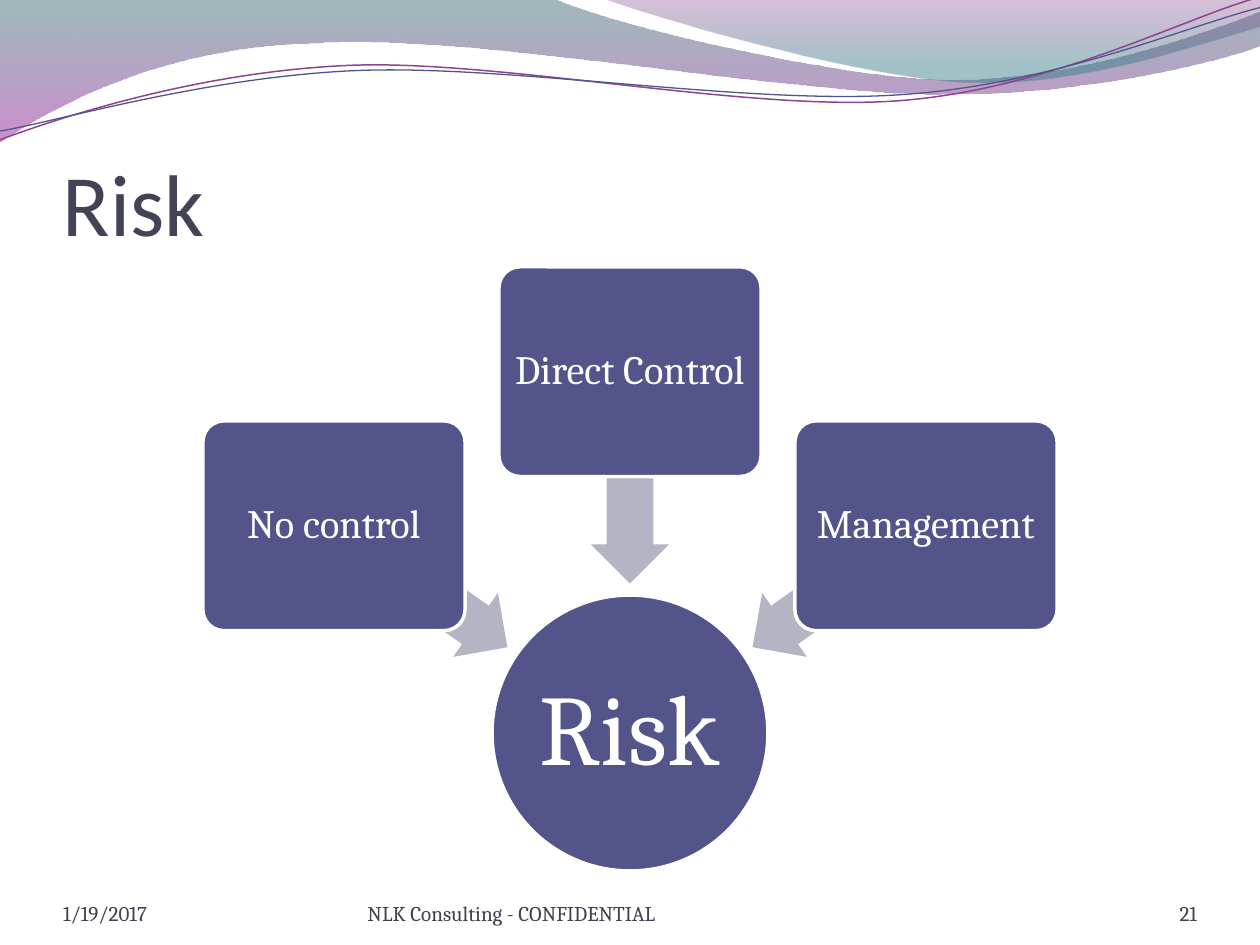
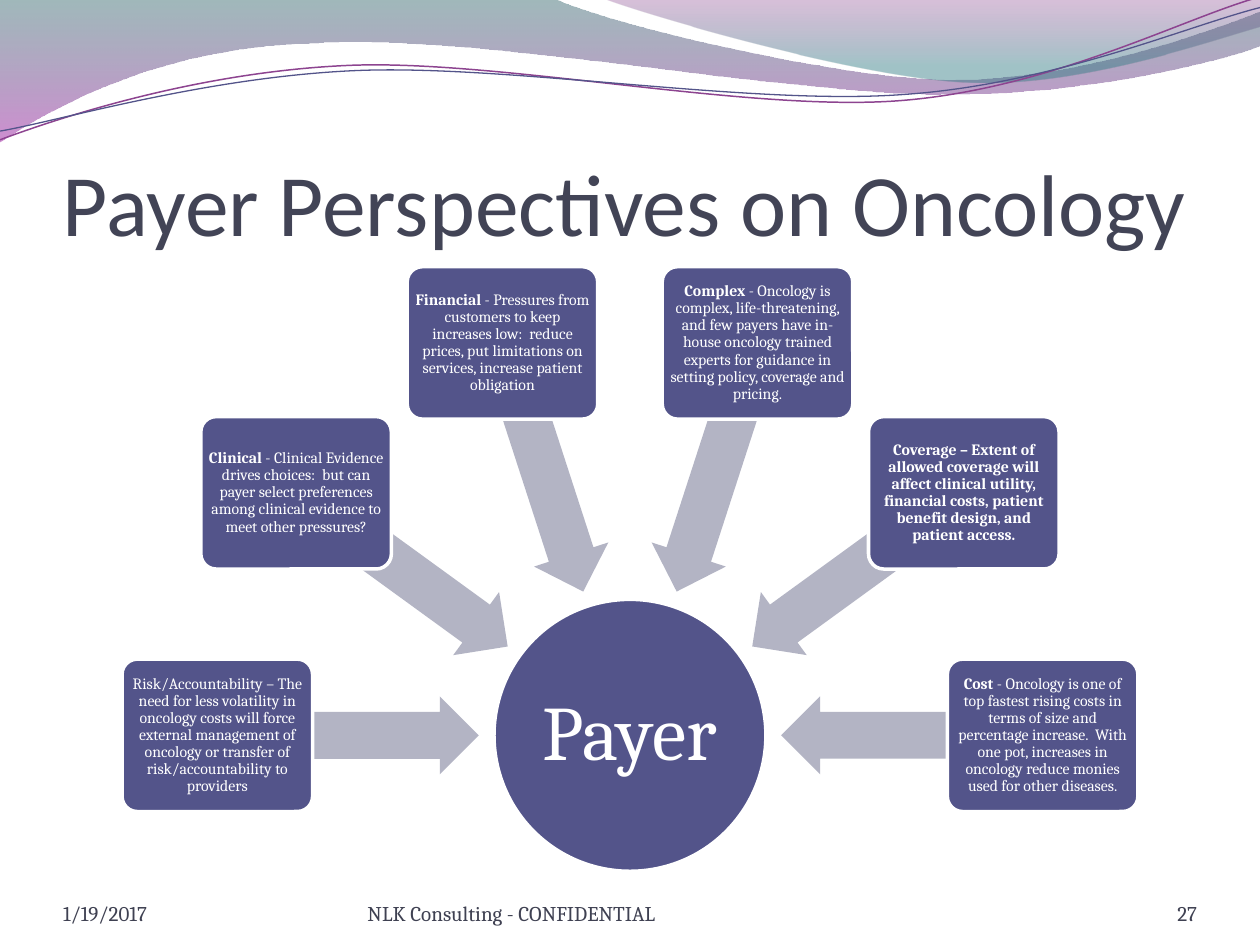
import math
import lxml.etree
import pptx
import pptx.dml.color
import pptx.enum.shapes
import pptx.enum.text
import pptx.oxml.ns
import pptx.util

Pt = pptx.util.Pt
SHAPE = pptx.enum.shapes.MSO_SHAPE
ANCHOR = pptx.enum.text.MSO_ANCHOR
ALIGN = pptx.enum.text.PP_ALIGN
qn = pptx.oxml.ns.qn

COLORS = {
    "title": "424456", "footer": "3F4152", "white": "FFFFFF",
    "indigo": "53548A", "arrow": "B3B4C4", "plum": "8D4490",
    "deep_teal": "2D6368", "magenta": "A530A9",
    "purple": "7F2F82", "teal": "2F7B82",
}
SLIDE_WIDTH, SLIDE_HEIGHT = 720, 540
HUB_X = SLIDE_WIDTH / 2
ARROW_WIDTH = 44.6

waves = [
    {"start": (0, 0),
     "segments": [(316.8, -0.7),
                  (342.7, 12.2, 478.1, 45.4, 545.8, 45.4),
                  (614.2, 45.4, 689.8, 18.7, 720, 6.5),
                  (720.7, 25.9),
                  (707.8, 31.7, 626.4, 54.7, 537.1, 54),
                  (447.8, 54, 275, 20.2, 185, 24.5),
                  (92.9, 25.9, 33.1, 59.8, -0.7, 81.4),
                  (0, 0)],
     "gradient": [(0, "deep_teal", 45), (100, "magenta", 55)]},
    {"start": (344.9, -0.7),
     "segments": [(366.5, 7.9, 491, 44.6, 553.7, 46.8),
                  (616.3, 49.7, 691.9, 23, 720, 15.1),
                  (720, 0),
                  (344.9, -0.7)],
     "gradient": [(0, "purple", 30), (80, "teal", 45)]},
    {"start": (0, 79.9),
     "segments": [(34.6, 67, 113.8, 41, 199.4, 37.4),
                  (284.4, 33.8, 427, 64.1, 513.4, 57.6),
                  (599.8, 51.1, 675.4, 10.8, 718.6, -1.4)],
     "line": ("plum", 0.85)},
    {"start": (0, 74.9),
     "segments": [(33.8, 69.1, 118.1, 43.9, 203.8, 40.3),
                  (290.2, 36.7, 429.8, 60.5, 516.2, 54),
                  (601.9, 48.2, 677.5, 15.1, 720, 4.3)],
     "line": ("indigo", 0.75)},
]

diagrams = [
    {"title": "Risk", "number": "21", "hub": "Risk", "hub_size": 57,
     "hub_y": 418.9, "hub_diameter": 157.7,
     "factor_distance": 206.5, "factor_width": 149.8, "factor_size": 23,
     "arrow_distance": 146, "arrow_length": 121,
     "first_angle": 215, "angle_step": 55,
     "factors": [("", "No control"), ("", "Direct Control"), ("", "Management")]},
    {"title": "Payer Perspectives on Oncology", "number": "27", "hub": "Payer", "hub_size": 44,
     "hub_y": 420.2, "hub_diameter": 155.4,
     "factor_distance": 235.8, "factor_width": 108.9, "factor_size": 9,
     "arrow_distance": 160.9, "arrow_length": 149,
     "first_angle": 180, "angle_step": 36,
     "factors": [
         ("", "Risk/Accountability – The need for less volatility in oncology costs will force "
              "external management of oncology or transfer of risk/accountability to providers"),
         ("Clinical", " - Clinical Evidence drives choices:  but can payer select preferences "
                      "among clinical evidence to meet other pressures?"),
         ("Financial", " - Pressures from customers to keep increases low:  reduce prices, "
                       "put limitations on services, increase patient obligation"),
         ("Complex", " - Oncology is complex, life-threatening, and few payers have in-house "
                     "oncology trained experts for guidance in setting policy, coverage and pricing."),
         ("Coverage – Extent of allowed coverage will affect clinical utility, financial costs, "
          "patient benefit design, and patient access.", ""),
         ("Cost", " - Oncology is one of top fastest rising costs in terms of size and percentage "
                  "increase.  With one pot, increases in oncology reduce monies used for other diseases."),
     ]},
]


def write(shape, bold, plain, size, color, font="Cambria", align=ALIGN.LEFT,
          anchor=ANCHOR.BOTTOM, insets=(0, 0, 0, 0), spacing=1.0):
    frame = shape.text_frame
    frame.word_wrap = True
    frame.vertical_anchor = anchor
    frame.margin_left, frame.margin_top, frame.margin_right, frame.margin_bottom = map(Pt, insets)
    paragraph = frame.paragraphs[0]
    paragraph.text = bold or plain
    if bold and plain:
        paragraph.add_run().text = plain
    paragraph.alignment = align
    paragraph.line_spacing = spacing
    for position, run in enumerate(paragraph.runs):
        run.font.name = font
        run.font.size = Pt(size)
        run.font.bold = bool(bold) and position == 0
        run.font.color.rgb = pptx.dml.color.RGBColor.from_string(COLORS[color])


def add_centred(slide, kind, x, y, width, height, color, outlined=True):
    shape = slide.shapes.add_shape(
        kind, Pt(x - width / 2), Pt(y - height / 2), Pt(width), Pt(height))
    shape.shadow.inherit = False
    shape.fill.solid()
    shape.fill.fore_color.rgb = pptx.dml.color.RGBColor.from_string(COLORS[color])
    if outlined:
        shape.line.color.rgb = pptx.dml.color.RGBColor.from_string(COLORS["white"])
        shape.line.width = Pt(2)
    else:
        shape.line.fill.background()
    return shape


deck = pptx.Presentation()
deck.slide_width, deck.slide_height = Pt(SLIDE_WIDTH), Pt(SLIDE_HEIGHT)

for diagram in diagrams:
    slide = deck.slides.add_slide(deck.slide_layouts[6])

    for wave in waves:
        start_x, start_y = wave["start"]
        builder = slide.shapes.build_freeform(Pt(start_x), Pt(start_y), scale=1.0)
        builder.add_line_segments([(Pt(segment[-2]), Pt(segment[-1])) for segment in wave["segments"]],
                                  close="gradient" in wave)
        ribbon = builder.convert_to_shape()
        ribbon.shadow.inherit = False
        ribbon.fill.background()
        properties = ribbon.element.spPr

        straight_parts = list(properties.iter(qn("a:lnTo")))
        for straight, segment in zip(straight_parts, wave["segments"]):
            if len(segment) == 2:
                continue
            curve = lxml.etree.Element(qn("a:cubicBezTo"))
            for x, y in zip(segment[::2], segment[1::2]):
                lxml.etree.SubElement(curve, qn("a:pt"), x=str(Pt(x) - ribbon.left),
                                      y=str(Pt(y) - ribbon.top))
            straight.getparent().replace(straight, curve)

        if "line" in wave:
            color, width = wave["line"]
            ribbon.line.color.rgb = pptx.dml.color.RGBColor.from_string(COLORS[color])
            ribbon.line.width = Pt(width)
            continue
        ribbon.line.fill.background()
        gradient = lxml.etree.Element(qn("a:gradFill"), rotWithShape="1")
        stops = lxml.etree.SubElement(gradient, qn("a:gsLst"))
        for position, color, opacity in wave["gradient"]:
            stop = lxml.etree.SubElement(stops, qn("a:gs"), pos=str(position * 1000))
            tint = lxml.etree.SubElement(stop, qn("a:srgbClr"), val=COLORS[color])
            lxml.etree.SubElement(tint, qn("a:alpha"), val=str(opacity * 1000))
        lxml.etree.SubElement(gradient, qn("a:lin"), ang="5400000", scaled="0")
        properties.replace(properties.find(qn("a:noFill")), gradient)

    title = slide.shapes.add_textbox(Pt(36), Pt(55.4), Pt(648), Pt(90))
    write(title, "", diagram["title"], 50, "title", font="Calibri", insets=(0, 3.6, 0, 0))

    hub_y = diagram["hub_y"]
    diameter = diagram["hub_diameter"]
    hub = add_centred(slide, SHAPE.OVAL, HUB_X, hub_y, diameter, diameter, "indigo")
    write(hub, "", diagram["hub"], diagram["hub_size"], "white", align=ALIGN.CENTER,
          anchor=ANCHOR.MIDDLE, insets=[0.05 * diagram["hub_size"]] * 4, spacing=0.9)

    for index, (bold, plain) in enumerate(diagram["factors"]):
        angle = diagram["first_angle"] + index * diagram["angle_step"]
        across, down = math.cos(math.radians(angle)), math.sin(math.radians(angle))

        reach = diagram["arrow_distance"]
        arrow = add_centred(slide, SHAPE.LEFT_ARROW, HUB_X + reach * across, hub_y + reach * down,
                            diagram["arrow_length"], ARROW_WIDTH, "arrow", outlined=False)
        arrow.adjustments[0], arrow.adjustments[1] = 0.6, 0.5
        arrow.rotation = angle % 360

        reach, width = diagram["factor_distance"], diagram["factor_width"]
        factor = add_centred(slide, SHAPE.ROUNDED_RECTANGLE, HUB_X + reach * across,
                             hub_y + reach * down, width, 0.8 * width, "indigo")
        factor.adjustments[0] = 0.1
        size = diagram["factor_size"]
        write(factor, bold, plain, size, "white", align=ALIGN.CENTER,
              anchor=ANCHOR.MIDDLE, insets=[0.15 * size] * 4, spacing=0.9)

    for left, width, text, align in [
        (36, 168, "1/19/2017", ALIGN.LEFT),
        (210, 264, "NLK Consulting - CONFIDENTIAL", ALIGN.LEFT),
        (624, 60, diagram["number"], ALIGN.RIGHT),
    ]:
        footer = slide.shapes.add_textbox(Pt(left), Pt(500.5), Pt(width), Pt(28.75))
        write(footer, "", text, 12, "footer", align=align)

deck.save("out.pptx")
